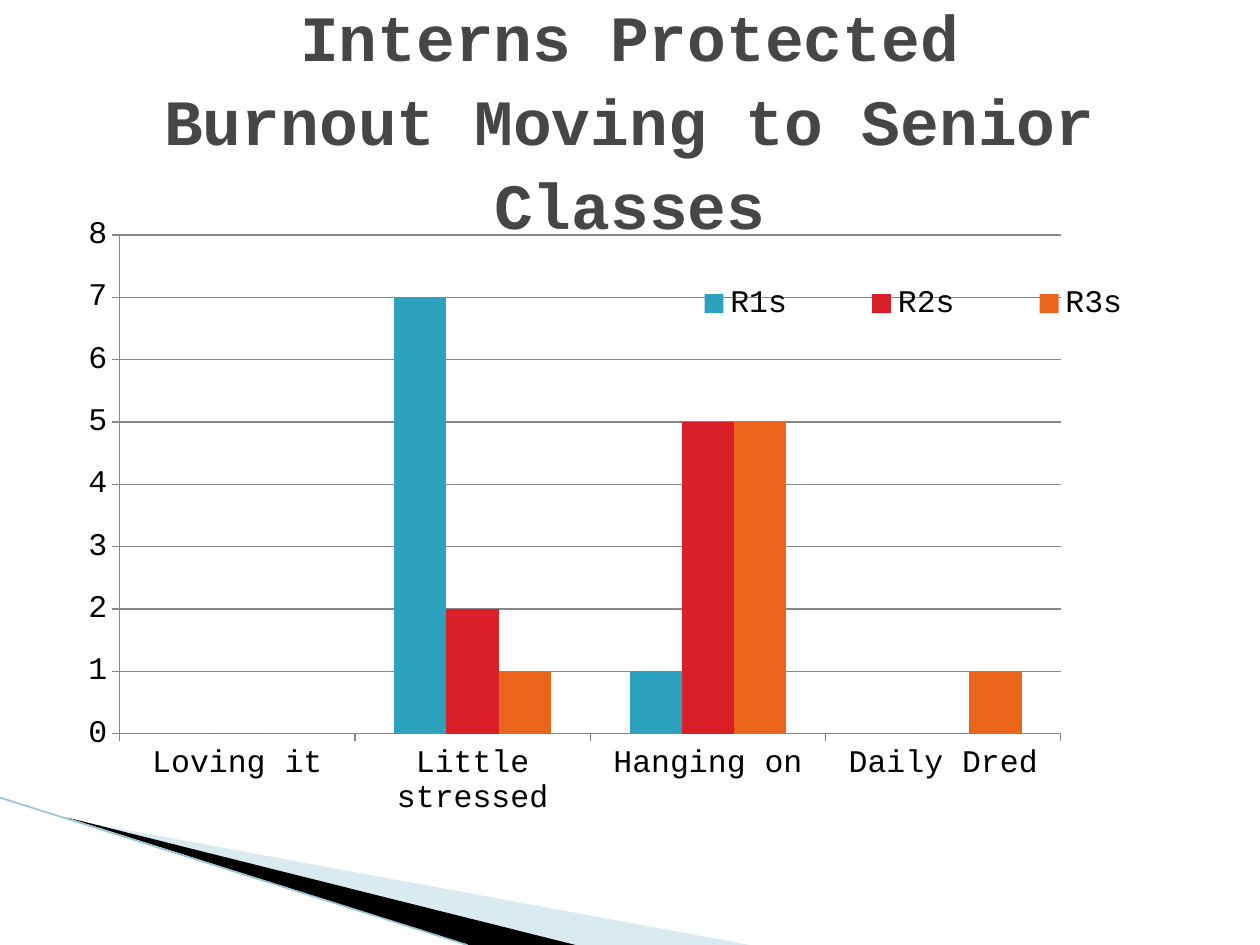
from lxml import etree
from pptx import Presentation
from pptx import util as u
from pptx.chart import data as chart_data
from pptx.dml import color
from pptx.enum import chart as ch, shapes, text
from pptx.oxml import ns, parse_xml

theme = {
    "font": "Courier New",
    "title_size": u.Pt(36.9),
    "chart_size": u.Pt(18),
    "title": color.RGBColor.from_string("464646"),
    "ink": color.RGBColor.from_string("000000"),
    "grid": color.RGBColor.from_string("868686"),
    "pale": color.RGBColor.from_string("A0CBDC"),
    "edge": color.RGBColor.from_string("97C5D8"),
    "residents": [color.RGBColor.from_string(c) for c in ("2DA2BF", "DA1F28", "EB641B")],
}


def apply_format(target, values):
    for name, value in values.items():
        setattr(target, name, value)


def manual_layout(x, y, w, h, inner=False):
    target = '<c:layoutTarget val="inner"/>' if inner else ""
    fields = (("xMode", "edge"), ("yMode", "edge"), ("x", x), ("y", y), ("w", w), ("h", h))
    body = "".join(f'<c:{tag} val="{value}"/>' for tag, value in fields)
    return parse_xml(
        f'<c:layout {ns.nsdecls("c")}><c:manualLayout>{target}{body}</c:manualLayout></c:layout>'
    )


deck = Presentation()
apply_format(deck, {"slide_width": u.Cm(25.4), "slide_height": u.Cm(19.05)})
slide = deck.slides.add_slide(deck.slide_layouts[5])

heading = slide.shapes.title
apply_format(heading, {"left": u.Cm(1.27), "top": u.Cm(0.76), "width": u.Cm(22.86), "height": u.Cm(3.18)})
apply_format(heading.text_frame, {
    "text": "Interns Protected\vBurnout Moving to Senior Classes",
    "word_wrap": True,
    "auto_size": text.MSO_AUTO_SIZE.NONE,
    "vertical_anchor": text.MSO_ANCHOR.MIDDLE,
})
heading_line = heading.text_frame.paragraphs[0]
apply_format(heading_line, {"alignment": text.PP_ALIGN.CENTER, "line_spacing": 1.08})
for run in heading_line.runs:
    apply_format(run.font, {"name": theme["font"], "size": theme["title_size"], "bold": True})
    run.font.color.rgb = theme["title"]

wedges = [
    (theme["pale"], 40, [(1.4, 16.52), (15.11, 19.05), (11.58, 19.05)]),
    (theme["ink"], 100, [(1.35, 16.48), (11.6, 19.05), (9.45, 19.05)]),
]
for tint, opacity, corners in wedges:
    points = [(u.Cm(x), u.Cm(y)) for x, y in corners]
    outline = slide.shapes.build_freeform(*points[0])
    outline.add_line_segments(points[1:], close=True)
    wedge = outline.convert_to_shape()
    wedge.shadow.inherit = False
    wedge.fill.solid()
    wedge.fill.fore_color.rgb = tint
    wedge.line.fill.background()
    if opacity < 100:
        rgb = wedge.fill._xPr.find(".//" + ns.qn("a:srgbClr"))
        etree.SubElement(rgb, ns.qn("a:alpha"), val=str(opacity * 1000))

edge = slide.shapes.add_connector(
    shapes.MSO_CONNECTOR.STRAIGHT, u.Cm(0), u.Cm(16.08), u.Cm(9.42), u.Cm(19.05)
)
edge.line.color.rgb = theme["edge"]
edge.line.width = u.Pt(0.95)
etree.SubElement(edge._element.spPr, ns.qn("a:effectLst"))

moods = chart_data.CategoryChartData(number_format="General")
moods.categories = ["Loving it", "Little stressed", "Hanging on", "Daily Dred"]
for year, counts in {"R1s": (0, 7, 1, 0), "R2s": (0, 2, 5, 0), "R3s": (0, 1, 5, 1)}.items():
    moods.add_series(year, counts)

burnout = slide.shapes.add_chart(
    ch.XL_CHART_TYPE.COLUMN_CLUSTERED, u.Cm(1.27), u.Cm(4.11), u.Cm(22.86), u.Cm(12.57), moods
).chart
apply_format(burnout, {"has_title": False, "has_legend": True})
apply_format(burnout.font, {"name": theme["font"], "size": theme["chart_size"]})
burnout.font.color.rgb = theme["ink"]

columns = burnout.plots[0]
apply_format(columns, {"gap_width": 150, "overlap": 0, "vary_by_categories": False})
for series, tint in zip(columns.series, theme["residents"]):
    series.format.fill.solid()
    series.format.fill.fore_color.rgb = tint
    series.invert_if_negative = False

apply_format(burnout.value_axis, {
    "minimum_scale": 0, "maximum_scale": 8, "major_unit": 1, "has_major_gridlines": True,
})
for axis in (burnout.category_axis, burnout.value_axis):
    axis.major_tick_mark = ch.XL_TICK_MARK.OUTSIDE
    axis.format.line.color.rgb = theme["grid"]
burnout.value_axis.major_gridlines.format.line.color.rgb = theme["grid"]

apply_format(burnout.legend, {"position": ch.XL_LEGEND_POSITION.RIGHT, "include_in_layout": False})
legend = burnout.legend._element
plot_area = burnout._chartSpace.chart.plotArea
for part in (legend, plot_area):
    for layout in part.findall(ns.qn("c:layout")):
        part.remove(layout)
legend.find(ns.qn("c:legendPos")).addnext(manual_layout(0.5, 0.13, 0.5, 0.06))
plot_area.insert(0, manual_layout(0.05, 0.05, 0.83, 0.8, inner=True))

deck.save("out.pptx")
